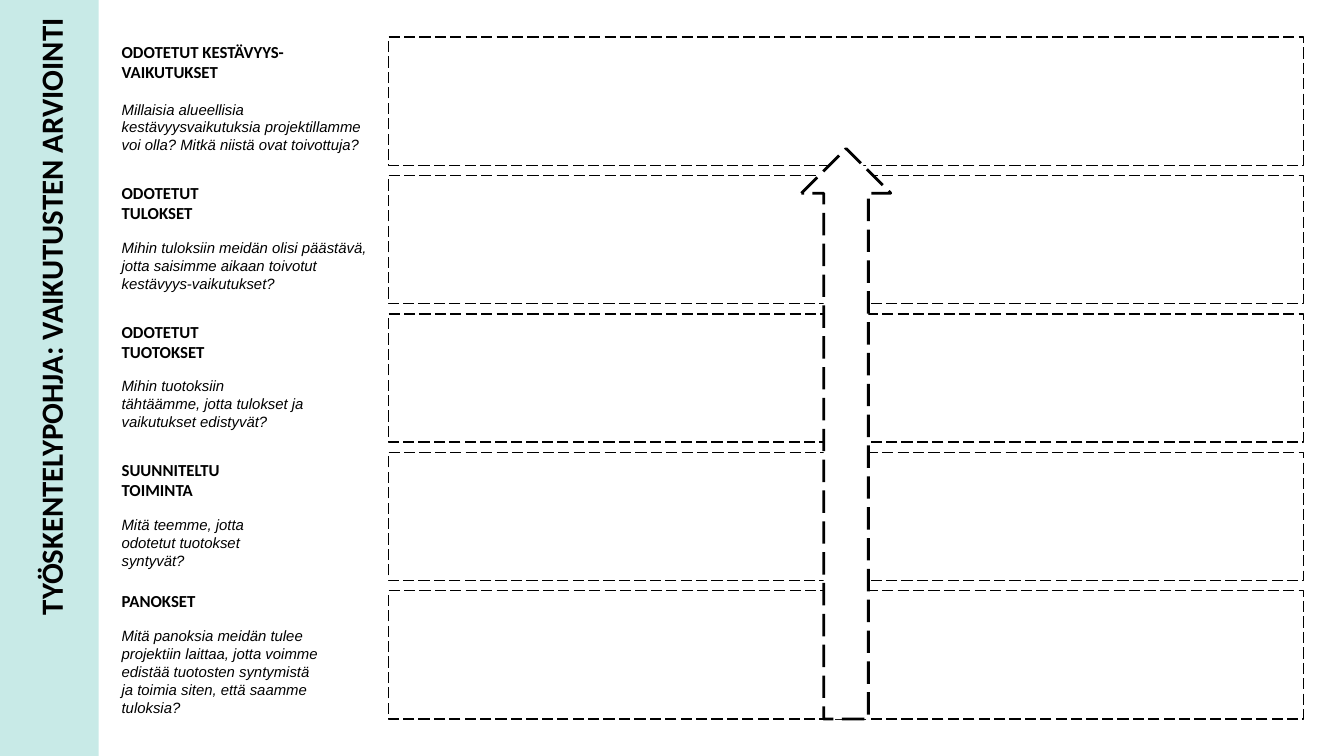
import pptx
import pptx.util
import pptx.dml.color
import pptx.enum.dml
import pptx.enum.shapes
import pptx.enum.text

BLACK = pptx.dml.color.RGBColor(0x00, 0x00, 0x00)
WHITE = pptx.dml.color.RGBColor(0xFF, 0xFF, 0xFF)
MINT = pptx.dml.color.RGBColor(0xC8, 0xEA, 0xE7)
SHAPES = pptx.enum.shapes.MSO_SHAPE
ALIGN = pptx.enum.text.PP_ALIGN

# Grid in inches: a side band, a label column and a column of five equal rows
WIDTH, HEIGHT = 20, 11.25
BAND_WIDTH = 1.47
LABEL_LEFT = 1.81
FIELD_LEFT, FIELD_RIGHT = 5.78, 19.4
ROW_TOP, ROW_PITCH, ROW_HEIGHT = 0.55, 2.06, 1.91
FIELD_BOTTOM = 10.7

deck = pptx.Presentation()
deck.slide_width = pptx.util.Inches(WIDTH)
deck.slide_height = pptx.util.Inches(HEIGHT)
page = deck.slides.add_slide(deck.slide_layouts[6])


def add_figure(kind, left, top, width, height, fill=None, line_width=None):
    figure = page.shapes.add_shape(kind, *map(pptx.util.Inches, (left, top, width, height)))
    figure.shadow.inherit = False
    if fill is None:
        figure.fill.background()
    else:
        figure.fill.solid()
        figure.fill.fore_color.rgb = fill
    if line_width is None:
        figure.line.fill.background()
    else:
        figure.line.color.rgb = BLACK
        figure.line.width = pptx.util.Pt(line_width)
        figure.line.dash_style = pptx.enum.dml.MSO_LINE.LONG_DASH


def add_text(text, left, top, width, height, font, size, spacing,
             bold=False, italic=False, align=ALIGN.LEFT):
    box = page.shapes.add_textbox(*map(pptx.util.Inches, (left, top, width, height)))
    frame = box.text_frame
    frame.word_wrap = True
    frame.margin_left = frame.margin_right = frame.margin_top = frame.margin_bottom = 0
    para = frame.paragraphs[0]
    para.alignment = align
    para.line_spacing = pptx.util.Pt(spacing)
    span = para.add_run()
    span.text = text
    span.font.name = font
    span.font.size = pptx.util.Pt(size)
    span.font.bold = bold
    span.font.italic = italic
    span.font.color.rgb = BLACK
    return box


# Side band with the vertical title
add_figure(SHAPES.RECTANGLE, 0, 0, BAND_WIDTH, HEIGHT, fill=MINT)
title = add_text("TYÖSKENTELYPOHJA: VAIKUTUSTEN ARVIOINTI", -4.65, 5.31, 10.7, 0.63,
                 "Calibri", 33, 46.2, bold=True, align=ALIGN.RIGHT)
title.rotation = 270

# Each row: heading, its offset, width and line count; question, its offset, width and line count
rows = [
    ("ODOTETUT KESTÄVYYS-VAIKUTUKSET", 0.07, 3.65, 2,
     "Millaisia alueellisia kestävyysvaikutuksia projektillamme voi olla? "
     "Mitkä niistä ovat toivottuja?", 0.94, 3.65, 3),
    ("ODOTETUT TULOKSET", 0.11, 1.96, 2,
     "Mihin tuloksiin meidän olisi päästävä, jotta saisimme aikaan toivotut "
     "kestävyys-vaikutukset?", 0.94, 3.65, 3),
    ("ODOTETUT TUOTOKSET", 0.11, 2.34, 2,
     "Mihin tuotoksiin tähtäämme, jotta tulokset ja vaikutukset edistyvät?",
     0.94, 2.74, 3),
    ("SUUNNITELTU TOIMINTA", 0.11, 2.34, 2,
     "Mitä teemme, jotta odotetut tuotokset syntyvät?", 0.94, 2.34, 3),
    ("PANOKSET", 0, 1.96, 1,
     "Mitä panoksia meidän tulee projektiin laittaa, jotta voimme edistää tuotosten "
     "syntymistä ja toimia siten, että saamme tuloksia?", 0.54, 2.95, 5),
]
for index, (heading, heading_drop, heading_width, heading_lines,
            question, question_drop, question_width, question_lines) in enumerate(rows):
    top = ROW_TOP + index * ROW_PITCH
    add_figure(SHAPES.RECTANGLE, FIELD_LEFT, top, FIELD_RIGHT - FIELD_LEFT, ROW_HEIGHT,
               line_width=1.5)
    add_text(heading, LABEL_LEFT, top + heading_drop, heading_width, 0.29 * heading_lines,
             "Calibri", 18, 21.6, bold=True)
    add_text(question, LABEL_LEFT, top + question_drop, question_width, 0.26 * question_lines,
             "Arial", 16, 19.2, italic=True)

# Arrow rising through the rows, centred on the field column
ARROW_WIDTH, ARROW_TOP = 1.33, 2.21
add_figure(SHAPES.UP_ARROW, (FIELD_LEFT + FIELD_RIGHT - ARROW_WIDTH) / 2, ARROW_TOP,
           ARROW_WIDTH, FIELD_BOTTOM - ARROW_TOP, fill=WHITE, line_width=3)

deck.save("out.pptx")
